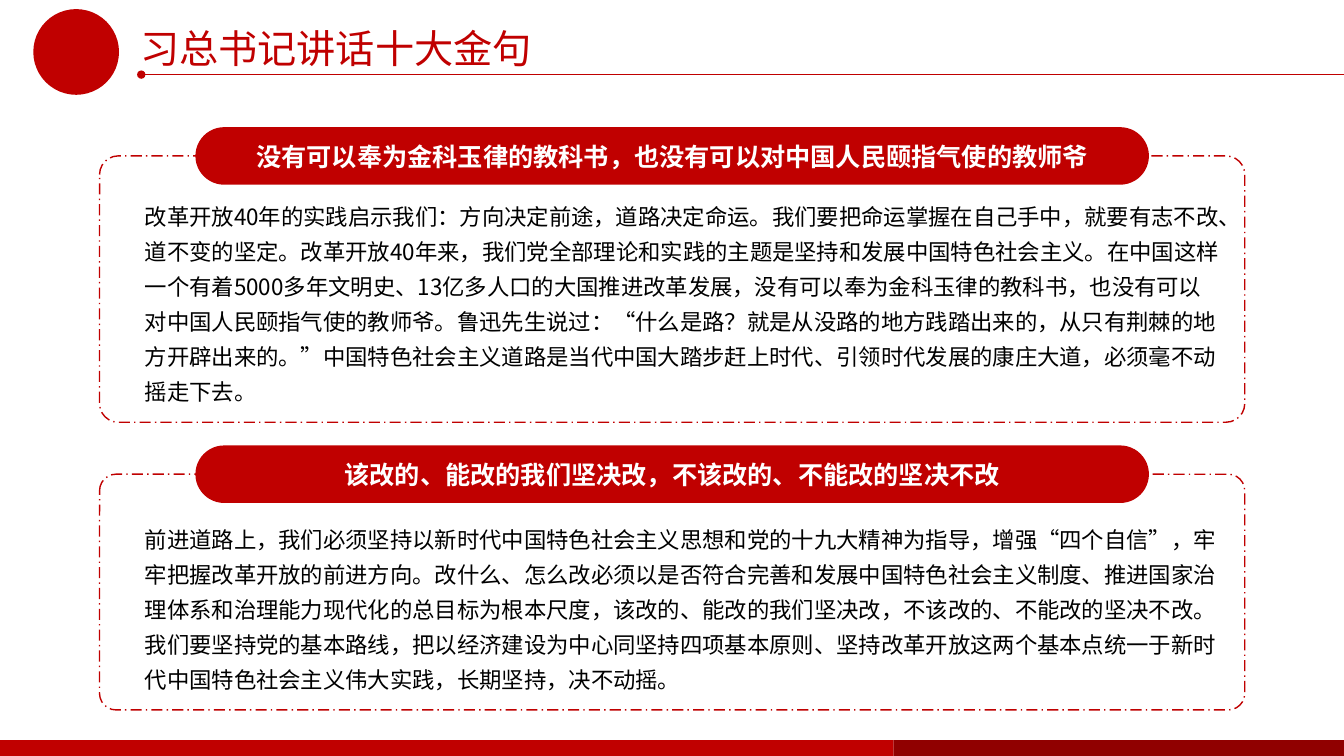
from lxml.etree import SubElement
from pptx import Presentation
from pptx.dml.color import RGBColor
from pptx.enum.dml import MSO_LINE
from pptx.enum.shapes import MSO_CONNECTOR, MSO_SHAPE
from pptx.enum.text import MSO_ANCHOR, MSO_AUTO_SIZE, PP_ALIGN
from pptx.oxml.ns import qn
from pptx.util import Cm, Pt

FONT = "Noto Sans CJK SC"
RED, DARK_RED, WHITE, BLACK = "C00000", "900000", "FFFFFF", "000000"
SLIDE_WIDTH, SLIDE_HEIGHT = Cm(33.87), Cm(19.05)

TITLE = "习总书记讲话十大金句"
QUOTES = [
    # top, height, body height, heading, body
    (Cm(3.93), Cm(6.71), Cm(5.51),
     "没有可以奉为金科玉律的教科书，也没有可以对中国人民颐指气使的教师爷",
     "改革开放40年的实践启示我们：方向决定前途，道路决定命运。我们要把命运掌握在自己手中，"
     "就要有志不改、道不变的坚定。改革开放40年来，我们党全部理论和实践的主题是坚持和发展"
     "中国特色社会主义。在中国这样一个有着5000多年文明史、13亿多人口的大国推进改革发展，"
     "没有可以奉为金科玉律的教科书，也没有可以对中国人民颐指气使的教师爷。鲁迅先生说过："
     "“什么是路？就是从没路的地方践踏出来的，从只有荆棘的地方开辟出来的。”"
     "中国特色社会主义道路是当代中国大踏步赶上时代、引领时代发展的康庄大道，必须毫不动摇走下去。"),
    (Cm(11.95), Cm(5.94), Cm(4.62),
     "该改的、能改的我们坚决改，不该改的、不能改的坚决不改",
     "前进道路上，我们必须坚持以新时代中国特色社会主义思想和党的十九大精神为指导，"
     "增强“四个自信”，牢牢把握改革开放的前进方向。改什么、怎么改必须以是否符合完善和发展"
     "中国特色社会主义制度、推进国家治理体系和治理能力现代化的总目标为根本尺度，"
     "该改的、能改的我们坚决改，不该改的、不能改的坚决不改。我们要坚持党的基本路线，"
     "把以经济建设为中心同坚持四项基本原则、坚持改革开放这两个基本点统一于"
     "新时代中国特色社会主义伟大实践，长期坚持，决不动摇。"),
]


def rgb(color):
    return RGBColor.from_string(color)


def write(shape, text, size, color, align=PP_ALIGN.LEFT, bold=False, wrap=True):
    frame = shape.text_frame
    frame.text = text
    frame.word_wrap = wrap
    frame.auto_size = MSO_AUTO_SIZE.NONE
    paragraph = frame.paragraphs[0]
    paragraph.alignment = align
    font = paragraph.font
    font.size, font.bold, font.name = Pt(size), bold, FONT
    font.color.rgb = rgb(color)
    # East Asian glyphs take their typeface from a separate element
    properties = paragraph._p.pPr.find(qn("a:defRPr"))
    SubElement(properties, qn("a:ea"), typeface=FONT)
    return paragraph


def add_solid(slide, kind, left, top, width, height, color):
    shape = slide.shapes.add_shape(kind, left, top, width, height)
    shape.shadow.inherit = False
    shape.fill.solid()
    shape.fill.fore_color.rgb = rgb(color)
    shape.line.fill.background()
    return shape


def add_header(slide, left, top, width):
    """Emblem disc, title and the rule that runs to the right edge."""
    add_solid(slide, MSO_SHAPE.OVAL, left, top, Cm(2.16), Cm(2.16), RED)

    rule_left, rule_top = left + Cm(2.72), top + Cm(1.65)
    rule = slide.shapes.add_connector(
        MSO_CONNECTOR.STRAIGHT, rule_left, rule_top, left + width, rule_top)
    rule.line.color.rgb = rgb(RED)
    rule.line.width = Pt(1)
    SubElement(rule.line._get_or_add_ln(), qn("a:headEnd"), type="oval")
    SubElement(rule._element.spPr, qn("a:effectLst"))

    title = slide.shapes.title
    title.left, title.top = left + Cm(2.44), top + Cm(0.25)
    title.width, title.height = Cm(11), Cm(1.45)
    write(title, TITLE, 28, RED, wrap=False)
    title.text_frame.vertical_anchor = MSO_ANCHOR.MIDDLE


def add_quote(slide, left, top, width, height, body_height, heading, body):
    """Dashed panel with a heading pill centred on its top edge."""
    panel = slide.shapes.add_shape(
        MSO_SHAPE.ROUNDED_RECTANGLE, left, top, width, height)
    panel.shadow.inherit = False
    panel.adjustments[0] = 0.07
    panel.fill.background()
    panel.line.color.rgb = rgb(RED)
    panel.line.width = Pt(1)
    panel.line.dash_style = MSO_LINE.LONG_DASH_DOT

    pill_width, pill_height = Cm(24.03), Cm(1.45)
    pill = add_solid(slide, MSO_SHAPE.ROUNDED_RECTANGLE,
                     left + (width - pill_width) // 2, top - pill_height // 2,
                     pill_width, pill_height, RED)
    pill.adjustments[0] = 0.5
    write(pill, heading, 18, WHITE, PP_ALIGN.CENTER, bold=True, wrap=False)
    pill.text_frame.vertical_anchor = MSO_ANCHOR.MIDDLE

    body_top = top + height - Cm(0.33) - body_height
    text_box = slide.shapes.add_textbox(
        left + Cm(0.89), body_top, width - Cm(1.27), body_height)
    write(text_box, body, 16, BLACK).line_spacing = 1.3


def add_footer(slide, left, top, width, height):
    split = Cm(22.52)
    add_solid(slide, MSO_SHAPE.RECTANGLE, left, top, split, height, RED)
    add_solid(slide, MSO_SHAPE.RECTANGLE,
              left + split, top, width - split, height, DARK_RED)


def main():
    presentation = Presentation()
    presentation.slide_width, presentation.slide_height = SLIDE_WIDTH, SLIDE_HEIGHT
    slide = presentation.slides.add_slide(presentation.slide_layouts[5])

    header_left = Cm(0.84)
    add_header(slide, header_left, Cm(0.23), SLIDE_WIDTH - header_left)
    for top, height, body_height, heading, body in QUOTES:
        add_quote(slide, Cm(2.51), top, Cm(28.86), height, body_height, heading, body)
    footer_height = Cm(0.4)
    add_footer(slide, 0, SLIDE_HEIGHT - footer_height, SLIDE_WIDTH, footer_height)

    presentation.save("out.pptx")


if __name__ == "__main__":
    main()
